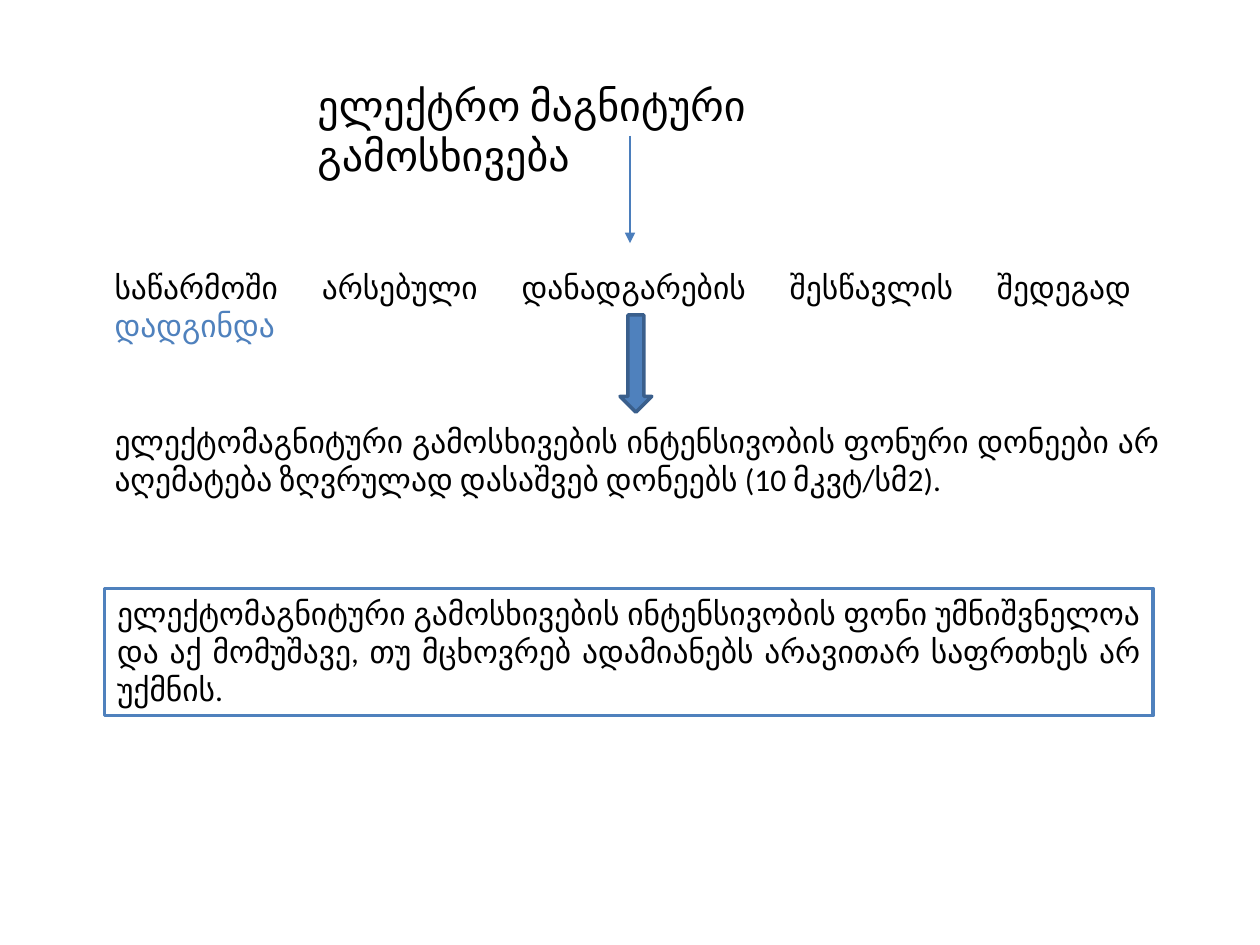
from lxml import etree
from pptx import Presentation
from pptx.dml.color import RGBColor
from pptx.enum.shapes import MSO_CONNECTOR, MSO_SHAPE
from pptx.enum.text import MSO_ANCHOR, MSO_AUTO_SIZE, PP_ALIGN
from pptx.oxml.ns import qn
from pptx.util import Cm, Pt

STRAIGHT = MSO_CONNECTOR.STRAIGHT
DOWN_ARROW, RECTANGLE = MSO_SHAPE.DOWN_ARROW, MSO_SHAPE.RECTANGLE
TOP, GROW = MSO_ANCHOR.TOP, MSO_AUTO_SIZE.SHAPE_TO_FIT_TEXT
LEFT, JUSTIFY = PP_ALIGN.LEFT, PP_ALIGN.JUSTIFY
BLACK, WHITE, BLUE = "000000", "FFFFFF", "4F81BD"


def rgb(value):
    """Return the colour for a hex string."""
    return RGBColor.from_string(value)


def write(s, runs, size=18, align=JUSTIFY):
    """Fill a shape with one paragraph of (text, colour) runs."""
    tf = s.text_frame
    tf.word_wrap = True
    tf.auto_size = GROW
    tf.vertical_anchor = TOP
    p = tf.paragraphs[0]
    p.alignment = align
    p.font.name = "Calibri"
    p.font.size = Pt(size)
    for text, color in runs:
        r = p.add_run()
        r.text = text
        r.font.color.rgb = rgb(color)


def add_text(slide, x, y, w, h, runs, **style):
    """Add a text box."""
    s = slide.shapes.add_textbox(Cm(x), Cm(y), Cm(w), Cm(h))
    write(s, runs, **style)


def add_block(slide, kind, x, y, w, h, fill, line):
    """Add a preset shape with a 2 pt outline."""
    s = slide.shapes.add_shape(kind, Cm(x), Cm(y), Cm(w), Cm(h))
    s.shadow.inherit = False
    s.fill.solid()
    s.fill.fore_color.rgb = rgb(fill)
    s.line.color.rgb = rgb(line)
    s.line.width = Pt(2)
    return s


def add_thin_arrow(slide, x, top, bottom):
    """Add a thin vertical arrow pointing down."""
    s = slide.shapes.add_connector(STRAIGHT, Cm(x), Cm(top), Cm(x), Cm(bottom))
    s.line.color.rgb = rgb("4B7EBC")
    s.line.width = Pt(0.75)
    etree.SubElement(s.line._get_or_add_ln(), qn("a:tailEnd"), type="triangle")
    etree.SubElement(s._element.spPr, qn("a:effectLst"))


def main():
    """Build the slide and save it."""
    prs = Presentation()
    prs.slide_width, prs.slide_height = Cm(25.4), Cm(19.05)
    slide = prs.slides.add_slide(prs.slide_layouts[6])
    add_text(slide, 6.15, 1.47, 14.1, 1.27,
             [("ელექტრო მაგნიტური გამოსხივება", BLACK)], size=24, align=LEFT)
    add_text(slide, 2.06, 5.28, 21, 1.07,
             [("საწარმოში არსებული დანადგარების შესწავლის შედეგად ", BLACK),
              ("დადგინდა", BLUE)])
    add_thin_arrow(slide, 12.7, 2.74, 4.9)
    add_text(slide, 2.06, 8.38, 21.56, 1.8,
             [("ელექტომაგნიტური გამოსხივების ინტენსივობის ფონური დონეები არ "
               "აღემატება ზღვრულად დასაშვებ დონეებს (10 მკვტ/სმ2).", BLACK)])
    add_block(slide, DOWN_ARROW, 12.5, 6.35, 0.64, 1.96, BLUE, "3A5F8C")
    conclusion = add_block(slide, RECTANGLE, 2.11, 11.86, 21.13, 2.57, WHITE, BLUE)
    write(conclusion,
          [("ელექტომაგნიტური გამოსხივების ინტენსივობის ფონი უმნიშვნელოა და აქ "
            "მომუშავე, თუ მცხოვრებ ადამიანებს არავითარ საფრთხეს არ უქმნის.", BLACK)])
    prs.save("out.pptx")


if __name__ == "__main__":
    main()
